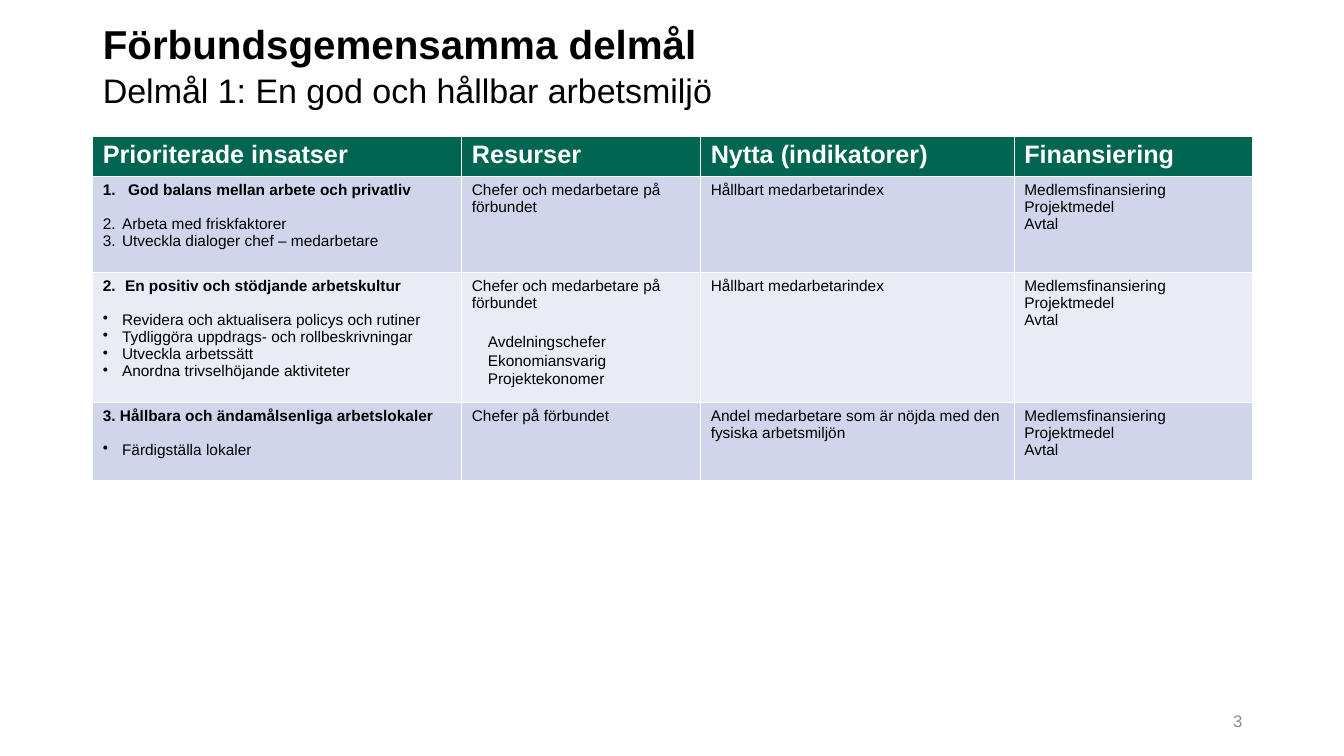
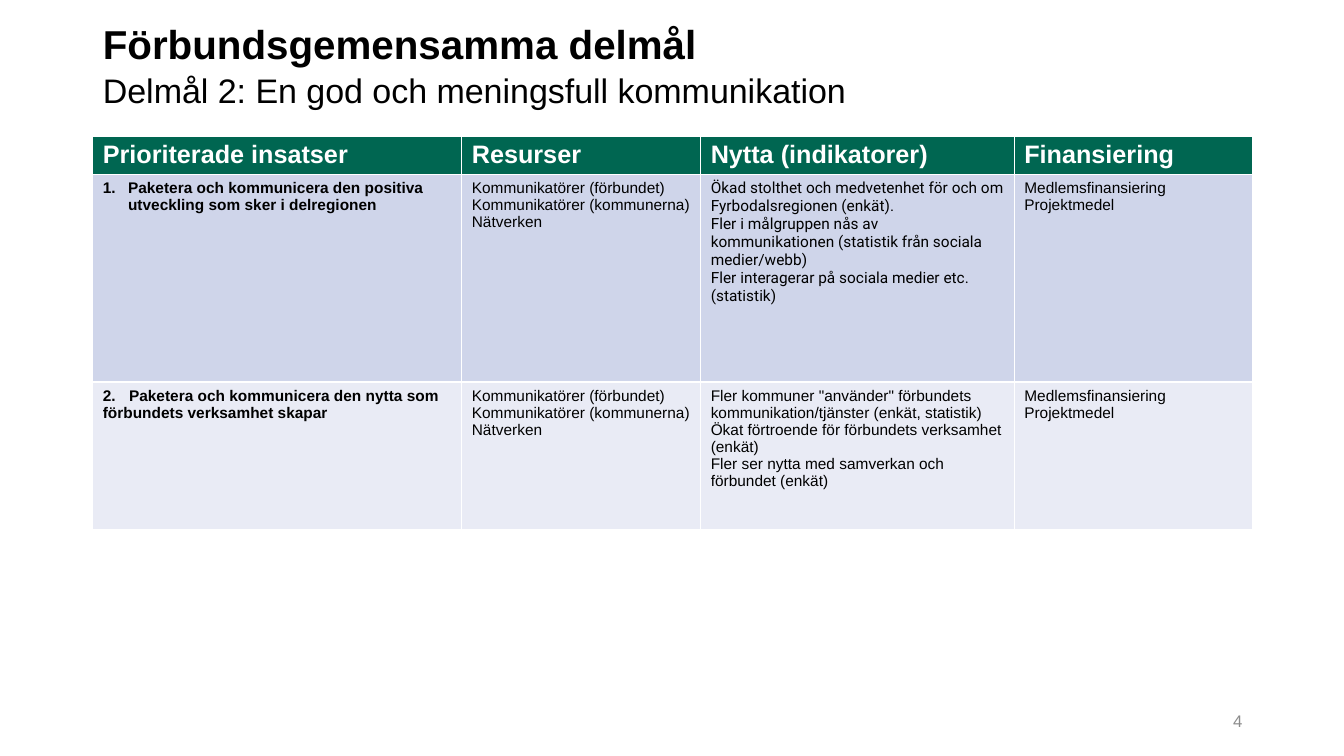
from lxml import etree
from pptx import Presentation
from pptx import util as u
from pptx.dml.color import RGBColor
from pptx.enum import text
from pptx.oxml import ns

GREEN = RGBColor(0x00, 0x66, 0x51)
BAND_DARK = RGBColor(0xCF, 0xD5, 0xEA)
BAND_LIGHT = RGBColor(0xE9, 0xEB, 0xF5)
WHITE = RGBColor(0xFF, 0xFF, 0xFF)
BLACK = RGBColor(0x00, 0x00, 0x00)
GREY = RGBColor(0x8C, 0x8C, 0x8C)

WIDTH, HEIGHT = u.Inches(13.33), u.Inches(7.5)
MARGIN = u.Inches(0.92)
CONTENT = u.Inches(11.5)
TABLE_TOP = HEIGHT * 0.18
COLUMNS = (3.66, 2.37, 3.11, 2.36)

HEADER = {"size": u.Pt(18), "name": "Arial", "bold": True}
BODY = {"size": u.Pt(11), "name": "Arial", "bold": False}
STRONG = {**BODY, "bold": True}
ROBOTO = {**BODY, "name": "Roboto"}
TITLE = {"size": u.Pt(28.8), "name": "Arial", "bold": True}
SUBTITLE = {"size": u.Pt(24.3), "name": "Arial", "bold": False}
NUMBER = {"size": u.Pt(12), "name": "Arial", "bold": False}

AUTO_NUMBER = ("buAutoNum", {"type": "arabicPeriod"})
DOT = ("buChar", {"char": "•"})
KINDS = {
    "plain": (BODY, None, 0, 0),
    "roboto": (ROBOTO, None, 0, 0),
    "heading": (STRONG, None, 0, 0),
    "tabbed near": (STRONG, None, 0, 0.22),
    "tabbed far": (STRONG, None, 0, 0.26),
    "numbered heading": (STRONG, AUTO_NUMBER, 0.25, 0),
    "numbered": (BODY, AUTO_NUMBER, 0.19, 0),
    "bullet": (BODY, DOT, 0.19, 0),
}

HEADINGS = ("Prioriterade insatser", "Resurser", "Nytta (indikatorer)", "Finansiering")
STAFF = ["Chefer och medarbetare på förbundet"]
INDEX = ["Hållbart medarbetarindex"]
FUNDS = ["Medlemsfinansiering", "Projektmedel"]
ALL_FUNDS = FUNDS + ["Avtal"]
COMMUNICATORS = ["Kommunikatörer (förbundet)", "Kommunikatörer (kommunerna)", "Nätverken"]


def of_kind(kind, lines):
    return [(kind, line) for line in lines]


GOALS = [
    {
        "number": "3",
        "subtitle": "Delmål 1: En god och hållbar arbetsmiljö",
        "heights": (0.4, 0.95, 1.29, 0.78),
        "rows": [
            (of_kind("numbered heading", ["God balans mellan arbete och privatliv"])
             + of_kind("numbered", ["Arbeta med friskfaktorer",
                                    "Utveckla dialoger chef – medarbetare"]),
             STAFF, INDEX, ALL_FUNDS),
            (of_kind("tabbed near", ["2.\tEn positiv och stödjande arbetskultur"])
             + of_kind("bullet", ["Revidera och aktualisera policys och rutiner",
                                  "Tydliggöra uppdrags- och rollbeskrivningar",
                                  "Utveckla arbetssätt",
                                  "Anordna trivselhöjande aktiviteter"]),
             STAFF, INDEX, ALL_FUNDS),
            (of_kind("heading", ["3. Hållbara och ändamålsenliga arbetslokaler"])
             + of_kind("bullet", ["Färdigställa lokaler"]),
             ["Chefer på förbundet"],
             ["Andel medarbetare som är nöjda med den fysiska arbetsmiljön"], ALL_FUNDS),
        ],
    },
    {
        "number": "4",
        "subtitle": "Delmål 2: En god och meningsfull kommunikation",
        "heights": (0.37, 2.06, 1.46),
        "rows": [
            (of_kind("numbered heading", ["Paketera och kommunicera den positiva utveckling "
                                          "som sker i delregionen"]),
             COMMUNICATORS,
             of_kind("roboto", [
                 "Ökad stolthet och medvetenhet för och om Fyrbodalsregionen (enkät).",
                 "Fler i målgruppen nås av kommunikationen (statistik från sociala medier/webb)",
                 "Fler interagerar på sociala medier etc. (statistik)"]),
             FUNDS),
            (of_kind("tabbed far", ["2.\tPaketera och kommunicera den nytta som förbundets "
                                    "verksamhet\u00a0skapar"]),
             COMMUNICATORS,
             ['Fler kommuner "använder" förbundets kommunikation/tjänster (enkät, statistik)',
              "Ökat förtroende för förbundets verksamhet (enkät)",
              "Fler ser nytta med samverkan och förbundet (enkät)"],
             FUNDS),
        ],
    },
]


def add_run(paragraph, words, style, colour=BLACK):
    run = paragraph.add_run()
    run.text = words
    for attribute, value in style.items():
        setattr(run.font, attribute, value)
    run.font.color.rgb = colour


def format_list(paragraph, bullet, indent, tab):
    properties = paragraph._p.get_or_add_pPr()
    if bullet:
        properties.set("marL", str(u.Inches(indent)))
        properties.set("indent", str(-u.Inches(indent)))
        tag, attributes = bullet
        etree.SubElement(properties, ns.qn("a:" + tag), attributes)
    if tab:
        stops = etree.SubElement(properties, ns.qn("a:tabLst"))
        etree.SubElement(stops, ns.qn("a:tab"), {"pos": str(u.Inches(tab)), "algn": "l"})


def write_lines(frame, lines):
    after_heading = False
    for index, line in enumerate(lines):
        kind, words = line if isinstance(line, tuple) else ("plain", line)
        style, *layout = KINDS[kind]
        paragraph = frame.paragraphs[0] if index == 0 else frame.add_paragraph()
        format_list(paragraph, *layout)
        if after_heading:
            paragraph.space_before = u.Pt(12.3)
        add_run(paragraph, words, style)
        after_heading = style is STRONG


def add_title(slide, subtitle):
    title = slide.shapes.title
    title.left, title.top = MARGIN, u.Inches(0.37)
    title.width, title.height = CONTENT, u.Inches(0.51)
    frame = title.text_frame
    frame.word_wrap = True
    frame.auto_size = text.MSO_AUTO_SIZE.NONE
    frame.vertical_anchor = text.MSO_ANCHOR.MIDDLE
    heading = frame.paragraphs[0]
    heading.alignment = text.PP_ALIGN.LEFT
    heading.line_spacing = 1.07
    add_run(heading, "Förbundsgemensamma delmål", TITLE)
    heading.add_line_break()
    add_run(heading, subtitle, SUBTITLE)


def add_goal_table(slide, heights, rows):
    table = slide.shapes.add_table(len(heights), len(COLUMNS), MARGIN, int(TABLE_TOP),
                                   CONTENT, u.Inches(sum(heights))).table
    for column, width in zip(table.columns, COLUMNS):
        column.width = u.Inches(width)
    for row, height in zip(table.rows, heights):
        row.height = u.Inches(height)
    for column, heading in enumerate(HEADINGS):
        cell = table.cell(0, column)
        cell.fill.solid()
        cell.fill.fore_color.rgb = GREEN
        add_run(cell.text_frame.paragraphs[0], heading, HEADER, WHITE)
    for index, row in enumerate(rows, 1):
        for column, lines in enumerate(row):
            cell = table.cell(index, column)
            cell.fill.solid()
            cell.fill.fore_color.rgb = BAND_DARK if index % 2 else BAND_LIGHT
            write_lines(cell.text_frame, lines)


def add_text_box(slide, left, top, width, height):
    frame = slide.shapes.add_textbox(*map(u.Inches, (left, top, width, height))).text_frame
    frame.word_wrap = True
    return frame


def add_page_number(slide, number):
    frame = add_text_box(slide, 9.42, 6.95, 3, 0.4)
    frame.vertical_anchor = text.MSO_ANCHOR.MIDDLE
    frame.paragraphs[0].alignment = text.PP_ALIGN.RIGHT
    add_run(frame.paragraphs[0], number, NUMBER, GREY)


def add_goal_slide(deck, goal):
    slide = deck.slides.add_slide(deck.slide_layouts[5])
    add_goal_table(slide, goal["heights"], goal["rows"])
    add_title(slide, goal["subtitle"])
    add_page_number(slide, goal["number"])
    return slide


def main():
    deck = Presentation()
    deck.slide_width, deck.slide_height = WIDTH, HEIGHT
    environment, communication = [add_goal_slide(deck, goal) for goal in GOALS]
    roles = add_text_box(environment, 4.74, 3.25, 3, 0.66)
    write_lines(roles, ["Avdelningschefer", "Ekonomiansvarig", "Projektekonomer"])
    deck.save("out.pptx")


if __name__ == "__main__":
    main()
